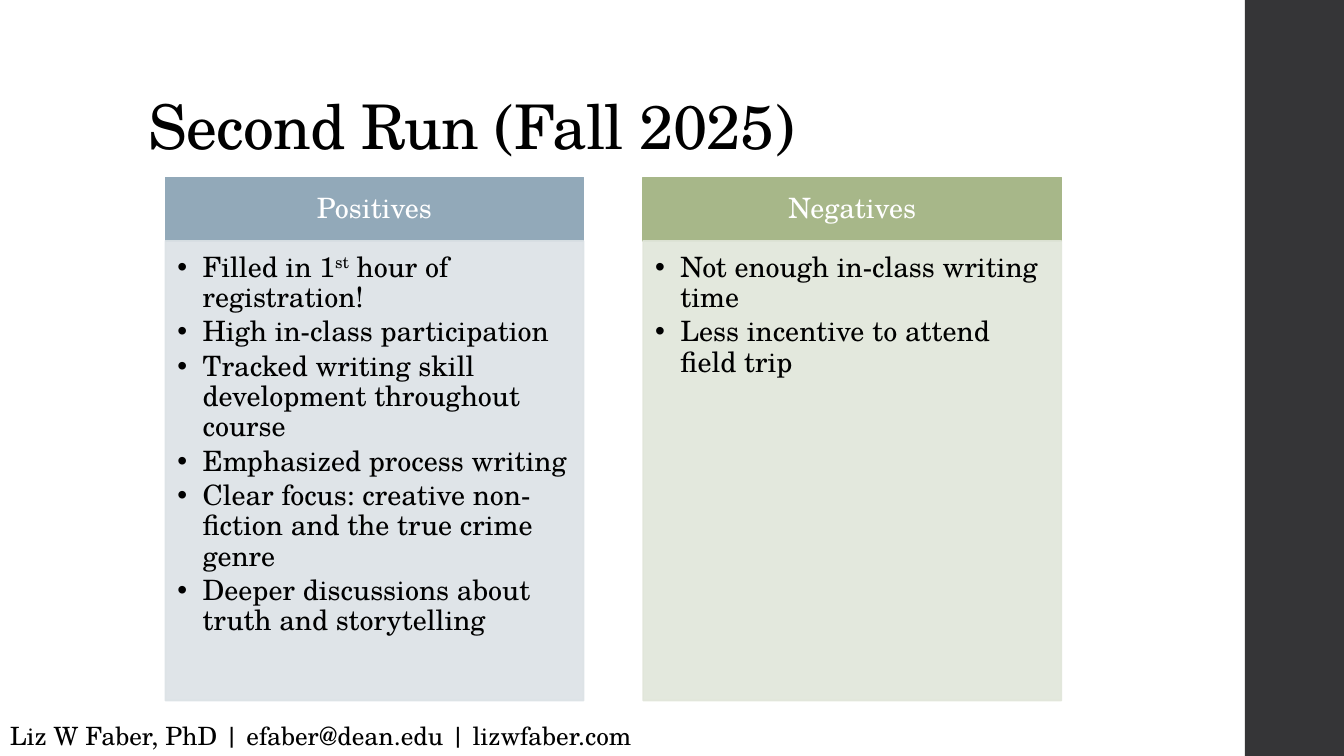
"""Build the slide that compares the positives and negatives of the second run."""
import lxml.etree
import pptx
import pptx.dml.color
import pptx.enum.shapes
import pptx.enum.text
import pptx.oxml.ns
import pptx.util

Pt = pptx.util.Pt
RGBColor = pptx.dml.color.RGBColor
ALIGN = pptx.enum.text.PP_ALIGN
ANCHOR = pptx.enum.text.MSO_ANCHOR
AUTO_SIZE = pptx.enum.text.MSO_AUTO_SIZE
qn = pptx.oxml.ns.qn

FONT = "TeX Gyre Schola"
BLACK = RGBColor(0x00, 0x00, 0x00)
WHITE = RGBColor(0xFF, 0xFF, 0xFF)
CHARCOAL = RGBColor(0x35, 0x35, 0x37)
BLUE = RGBColor(0x92, 0xA9, 0xB9)
PALE_BLUE = RGBColor(0xDC, 0xE2, 0xE6)
GREEN = RGBColor(0xA7, 0xB7, 0x89)
PALE_GREEN = RGBColor(0xE1, 0xE6, 0xDA)

SLIDE_W, SLIDE_H = 960, 540
HEADING_H = 45.36
COLUMN_LEFT, COLUMN_TOP, COLUMN_W, COLUMN_H = 118.08, 126.72, 298.8, 373.68
COLUMN_PITCH = 341.28

COLUMNS = [
    ("Positives", BLUE, PALE_BLUE, [
        ["Filled in 1", "^st", " hour of registration!"],
        ["High in-class participation"],
        ["Tracked writing skill development throughout course"],
        ["Emphasized process writing"],
        ["Clear focus: creative non-fiction and the true crime genre"],
        ["Deeper discussions about truth and storytelling"],
    ]),
    ("Negatives", GREEN, PALE_GREEN, [
        ["Not enough in-class writing time"],
        ["Less incentive to attend field trip"],
    ]),
]


def add_text(p, text, size=20, color=BLACK, align=ALIGN.LEFT, line_spacing=0.9,
             space_after=0, tracking=None, superscript=False):
    """Add a formatted run to a paragraph and set the paragraph format."""
    p.alignment = align
    p.line_spacing = line_spacing
    p.space_before = Pt(0)
    p.space_after = Pt(space_after)
    r = p.add_run()
    r.text = text
    r.font.name = FONT
    r.font.size = Pt(size)
    r.font.bold = False
    r.font.color.rgb = color
    if tracking is not None:
        r.font._element.set("spc", str(int(tracking * 100)))
    if superscript:
        r.font._element.set("baseline", "30000")


def place(sp, left, top, width, height):
    """Move a shape to a box given in points."""
    sp.left, sp.top, sp.width, sp.height = map(Pt, (left, top, width, height))


def set_frame(sp, anchor, margins=(7.2, 3.6, 7.2, 3.6)):
    """Set wrapping, anchor and margins, and return the text frame."""
    tf = sp.text_frame
    tf.word_wrap = True
    tf.auto_size = AUTO_SIZE.NONE
    tf.vertical_anchor = anchor
    tf.margin_left, tf.margin_top, tf.margin_right, tf.margin_bottom = map(Pt, margins)
    return tf


def paint(sp, color, opacity=100):
    """Give a shape one colour for fill and line, at an opacity in percent."""
    sp.fill.solid()
    sp.fill.fore_color.rgb = color
    sp.line.color.rgb = color
    sp.line.width = Pt(1.1)
    if opacity < 100:
        for clr in sp._element.spPr.iter(qn("a:srgbClr")):
            alpha = lxml.etree.SubElement(clr, qn("a:alpha"))
            alpha.set("val", str(opacity * 1000))


def add_bullet(p, indent):
    """Give a paragraph a round bullet with a hanging indent."""
    p.level = 1
    pPr = p._p.get_or_add_pPr()
    pPr.set("marL", str(Pt(indent)))
    pPr.set("indent", str(-Pt(indent)))
    lxml.etree.SubElement(pPr, qn("a:buChar")).set("char", "•")


def build_title(sp, left, top, width, height):
    """Fill the title placeholder."""
    place(sp, left, top, width, height)
    tf = set_frame(sp, ANCHOR.BOTTOM)
    add_text(tf.paragraphs[0], "Second Run (Fall 2025)", size=44, tracking=-0.5)


def build_column(heading, body, column, left, top, width, height):
    """Fill a heading and the list panel below it."""
    title, dark, pale, items = column
    place(heading, left, top, width, HEADING_H)
    paint(heading, dark)
    tf = set_frame(heading, ANCHOR.MIDDLE, (11.52, 6.48, 11.52, 6.48))
    add_text(tf.paragraphs[0], title, color=WHITE, align=ALIGN.CENTER)

    place(body, left, top + HEADING_H, width, height - HEADING_H)
    paint(body, pale, opacity=90)
    tf = set_frame(body, ANCHOR.TOP, (8.64, 8.64, 11.52, 12.24))
    for i, parts in enumerate(items):
        p = tf.add_paragraph() if i else tf.paragraphs[0]
        add_bullet(p, indent=18)
        for part in parts:
            add_text(p, part.lstrip("^"), space_after=3, superscript=part.startswith("^"))


def build_side_bar(s, left, top, width, height):
    """Draw the dark band at the right edge."""
    sp = s.shapes.add_shape(pptx.enum.shapes.MSO_SHAPE.RECTANGLE,
                            *map(Pt, (left, top, width, height)))
    sp.shadow.inherit = False
    sp.fill.solid()
    sp.fill.fore_color.rgb = CHARCOAL
    sp.line.fill.background()


def build_contact(s, left, top, width, height):
    """Write the contact line at the foot of the slide."""
    sp = s.shapes.add_textbox(*map(Pt, (left, top, width, height)))
    tf = set_frame(sp, ANCHOR.TOP)
    add_text(tf.paragraphs[0], "Liz W Faber, PhD | efaber@dean.edu | lizwfaber.com",
             size=18, line_spacing=1.0)


def main():
    """Build and save the presentation."""
    prs = pptx.Presentation()
    prs.slide_width, prs.slide_height = Pt(SLIDE_W), Pt(SLIDE_H)
    s = prs.slides.add_slide(prs.slide_layouts.get_by_name("Comparison"))
    build_side_bar(s, 889.2, 0, 72, SLIDE_H)
    build_title(s.shapes.title, 98.64, 15.84, 763.2, 104.4)
    title, *boxes = s.placeholders
    for i, column in enumerate(COLUMNS):
        build_column(boxes[2 * i], boxes[2 * i + 1], column,
                     COLUMN_LEFT + i * COLUMN_PITCH, COLUMN_TOP, COLUMN_W, COLUMN_H)
    build_contact(s, 0, 511.2, 499.68, 28.8)
    prs.save("out.pptx")


if __name__ == "__main__":
    main()
